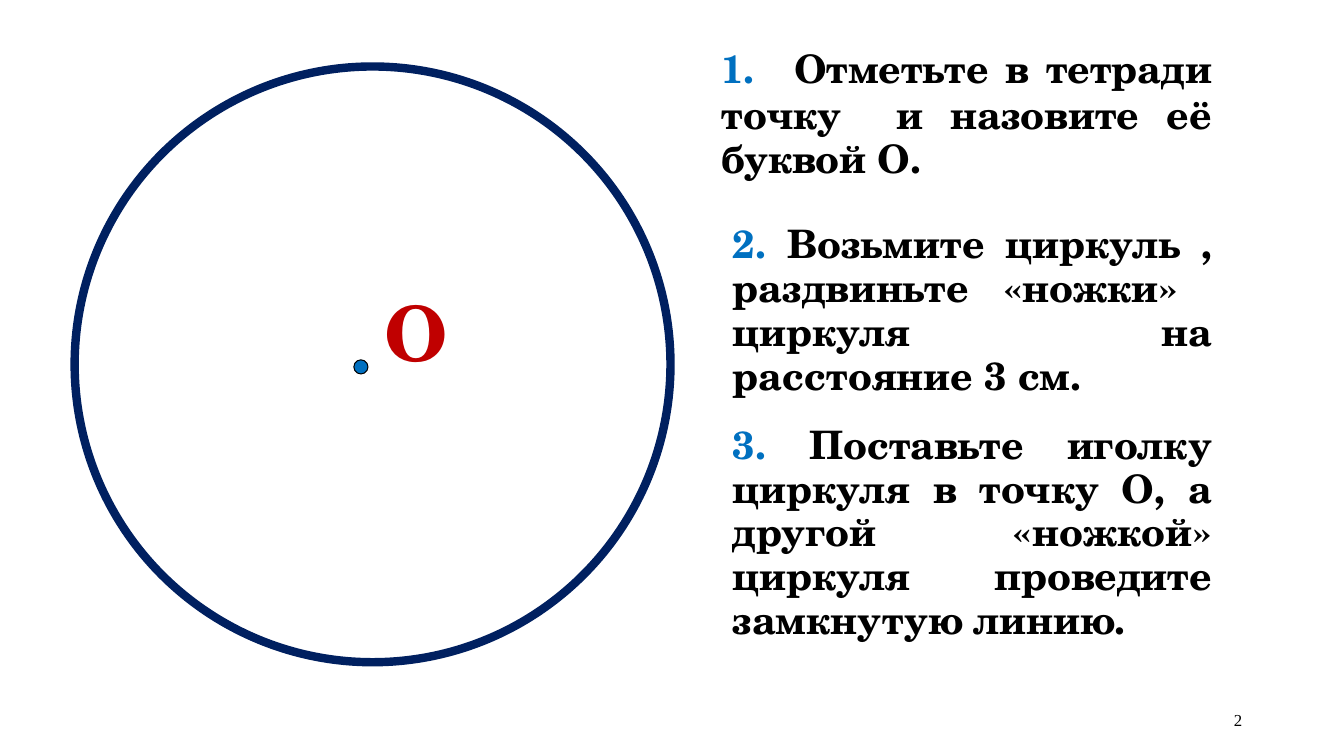
import pptx
import pptx.util
import pptx.dml.color
import pptx.enum.shapes
import pptx.enum.text

Inches, Pt = pptx.util.Inches, pptx.util.Pt
ALIGN = pptx.enum.text.PP_ALIGN
OVAL = pptx.enum.shapes.MSO_SHAPE.OVAL
COLORS = {"blue": "0070C0", "navy": "002060", "red": "C00000", "black": "000000"}
SCHOLA = "TeX Gyre Schola"
WIDE, HIGH = 13.33, 7.5


def tint(name):
    return pptx.dml.color.RGBColor.from_string(COLORS[name])


def write(shapes, place, pieces, align, font=SCHOLA, bold=True, gap=0.93):
    """Add a text box; each piece is (text, size, color)."""
    frame = shapes.add_textbox(*map(Inches, place)).text_frame
    frame.word_wrap = True
    par = frame.paragraphs[0]
    par.alignment, par.line_spacing = align, gap
    for text, size, color in pieces:
        run = par.add_run()
        run.text = text
        run.font.name, run.font.size, run.font.bold = font, Pt(size), bold
        run.font.color.rgb = tint(color)
    return frame


deck = pptx.Presentation()
deck.slide_width, deck.slide_height = Inches(WIDE), Inches(HIGH)
slide = deck.slides.add_slide(deck.slide_layouts[6])

# Circle with its centre point and letter
figure = slide.shapes.add_group_shape().shapes
ovals = [
    (3.51, 3.57, 0.14, "blue", "black", 0.75),
    (0.74, 0.66, 5.91, None, "navy", 6),
]
for left, top, size, fill, line, width in ovals:
    oval = figure.add_shape(OVAL, *map(Inches, (left, top, size, size)))
    oval.shadow.inherit = False
    if fill:
        oval.fill.solid()
        oval.fill.fore_color.rgb = tint(fill)
    else:
        oval.fill.background()
    oval.line.color.rgb = tint(line)
    oval.line.width = Pt(width)
write(figure, (3.72, 2.86, 0.47, 0.95), [("О", 54.4, "red")], ALIGN.LEFT)

# Steps share one right edge
right = 12.12
steps = [
    (7.06, 0.33, 1.54, [("1.", 28, "blue"), ("  ", 36, "black"),
     ("Отметьте в тетради точку  и назовите её буквой О.", 28, "black")]),
    (7.17, 2.17, 1.85, [("2. ", 28, "blue"),
     ("Возьмите циркуль , раздвиньте «ножки»  циркуля  на расстояние 3 см.", 28, "black")]),
    (7.17, 4.16, 2.29, [("3. ", 28, "blue"),
     ("Поставьте иголку циркуля в точку О, а другой «ножкой» циркуля "
      "проведите замкнутую линию.", 28, "black")]),
]
for left, top, height, pieces in steps:
    write(slide.shapes, (left, top, right - left, height), pieces, ALIGN.JUSTIFY)

# Page number
page = write(slide.shapes, (9.42, 6.95, 3, 0.4), [("2", 12, "black")],
             ALIGN.RIGHT, "Times New Roman", False, 0.95)
page.vertical_anchor = pptx.enum.text.MSO_ANCHOR.MIDDLE

deck.save("out.pptx")
